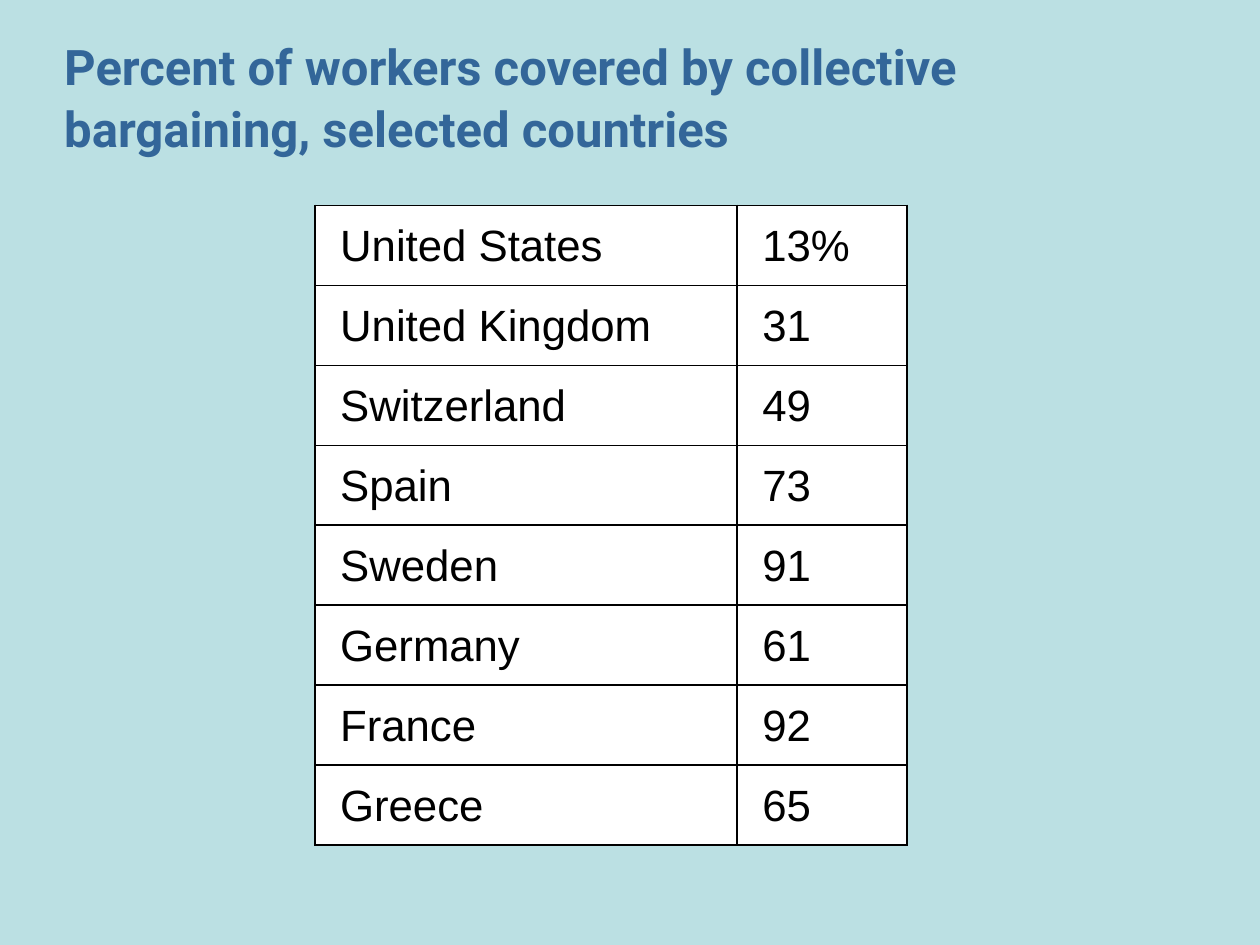
from typing import NamedTuple

from lxml.etree import SubElement
from pptx import Presentation
from pptx.dml.color import RGBColor
from pptx.enum.text import MSO_ANCHOR, PP_ALIGN
from pptx.oxml.ns import qn
from pptx.table import _Cell
from pptx.util import Inches, Pt

BACKGROUND = RGBColor(0xBB, 0xE0, 0xE3)
TITLE_BLUE = RGBColor(0x33, 0x66, 0x99)
BLACK = RGBColor(0x00, 0x00, 0x00)
WHITE = RGBColor(0xFF, 0xFF, 0xFF)
LINE_SPACING = 1.05


class Coverage(NamedTuple):
    country: str
    percent: str


COVERAGES = [
    Coverage("United States", "13%"),
    Coverage("United Kingdom", "31"),
    Coverage("Switzerland", "49"),
    Coverage("Spain", "73"),
    Coverage("Sweden", "91"),
    Coverage("Germany", "61"),
    Coverage("France", "92"),
    Coverage("Greece", "65"),
]
COLUMN_WIDTHS = [Inches(3.35), Inches(1.35)]
TABLE_HEIGHT = Inches(5.08)


def add_borders(cell: _Cell) -> None:
    properties = cell._tc.get_or_add_tcPr()
    # Border lines must precede the fill in the cell properties.
    for position, side in enumerate(("lnL", "lnR", "lnT", "lnB")):
        line = SubElement(properties, qn(f"a:{side}"), w=str(Pt(1)))
        fill = SubElement(line, qn("a:solidFill"))
        SubElement(fill, qn("a:srgbClr"), val=str(BLACK))
        properties.insert(position, line)


def fill_cell(cell: _Cell, text: str) -> None:
    cell.text = text
    cell.vertical_anchor = MSO_ANCHOR.MIDDLE
    cell.margin_left = Inches(0.2)
    cell.margin_right = Inches(0.1)
    cell.margin_top = cell.margin_bottom = Inches(0.05)
    cell.fill.solid()
    cell.fill.fore_color.rgb = WHITE
    paragraph = cell.text_frame.paragraphs[0]
    paragraph.line_spacing = LINE_SPACING
    paragraph.font.name = "Arial"
    paragraph.font.size = Pt(25)
    paragraph.font.bold = False
    paragraph.font.color.rgb = BLACK
    add_borders(cell)


presentation = Presentation()
presentation.slide_width = Inches(10)
presentation.slide_height = Inches(7.5)
slide = presentation.slides.add_slide(presentation.slide_layouts[5])
slide.background.fill.solid()
slide.background.fill.fore_color.rgb = BACKGROUND

title = slide.shapes.title
title.left, title.top = Inches(0.51), Inches(0.24)
title.width, title.height = Inches(9.02), Inches(1.03)
title_frame = title.text_frame
title_frame.text = "Percent of workers covered by collective bargaining, selected countries"
title_frame.word_wrap = True
title_frame.vertical_anchor = MSO_ANCHOR.MIDDLE
title_frame.margin_left = title_frame.margin_right = 0
title_frame.margin_top = title_frame.margin_bottom = 0
heading = title_frame.paragraphs[0]
heading.alignment = PP_ALIGN.LEFT
heading.line_spacing = LINE_SPACING
heading.font.name = "Roboto"
heading.font.size = Pt(28)
heading.font.bold = True
heading.font.color.rgb = TITLE_BLUE

coverage_table = slide.shapes.add_table(
    len(COVERAGES), len(COLUMN_WIDTHS),
    Inches(2.5), Inches(1.63), sum(COLUMN_WIDTHS), TABLE_HEIGHT,
).table
coverage_table.first_row = False
coverage_table.horz_banding = False
for column, width in zip(coverage_table.columns, COLUMN_WIDTHS):
    column.width = width
for row, coverage in zip(coverage_table.rows, COVERAGES):
    for cell, text in zip(row.cells, coverage):
        fill_cell(cell, text)

presentation.save("out.pptx")
